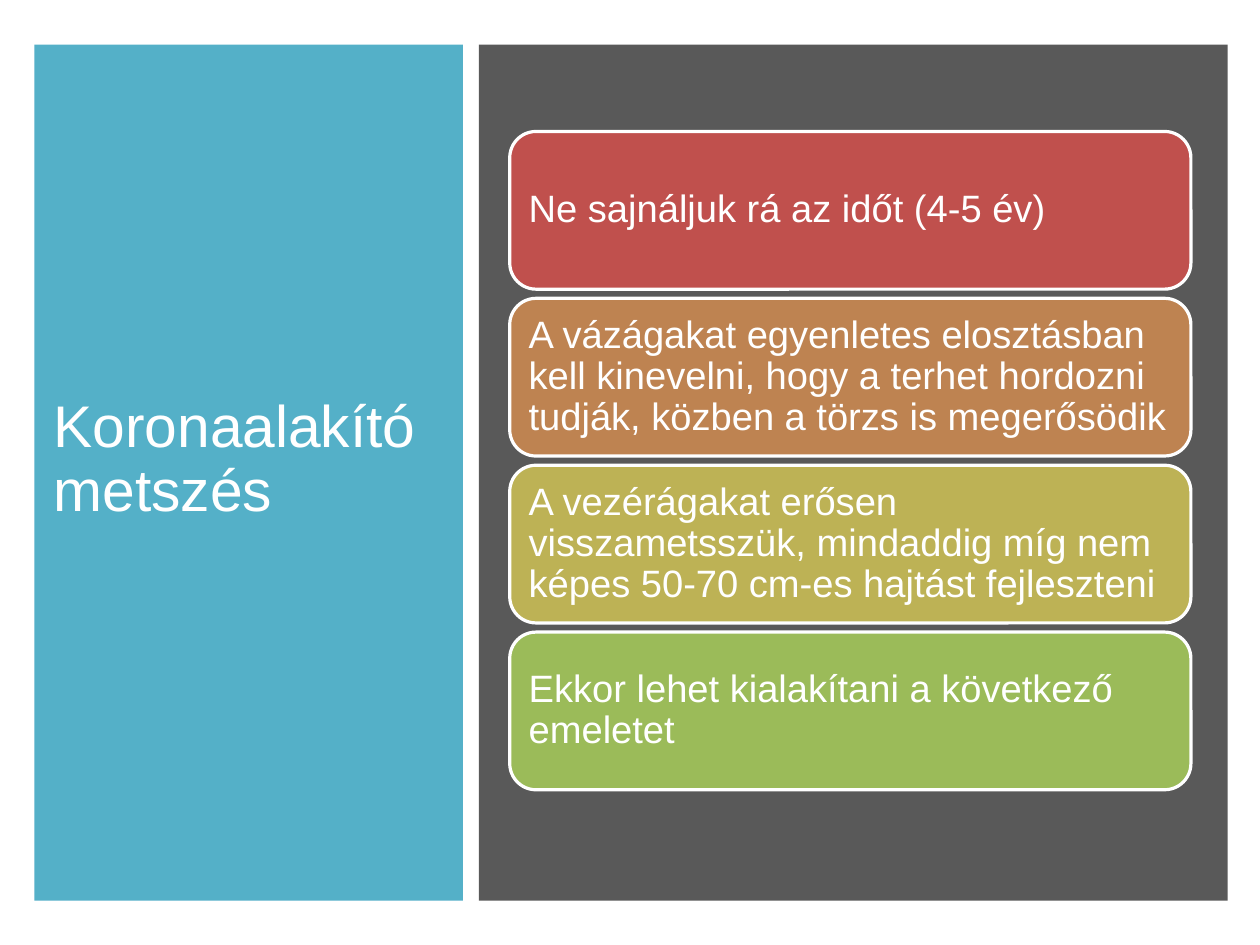
from lxml import etree
from pptx import Presentation
from pptx.dml.color import RGBColor
from pptx.enum import shapes, text
from pptx.oxml import ns
from pptx.util import Inches, Pt

HEADING = "Koronaalakító metszés"
STEPS = [
    ("Ne sajnáljuk rá az időt (4-5 év)", "C0504D"),
    ("A vázágakat egyenletes elosztásban kell kinevelni, hogy a terhet hordozni "
     "tudják, közben a törzs is megerősödik", "BE8351"),
    ("A vezérágakat erősen visszametsszük, mindaddig míg nem képes 50-70 cm-es "
     "hajtást fejleszteni", "BDB255"),
    ("Ekkor lehet kialakítani a következő emeletet", "9BBB59"),
]
THEME = {
    "font": "Arial", "ink": "FFFFFF", "outline": "FFFFFF",
    "heading_panel": "4BACC6", "steps_panel": "595959",
    "heading_size": 37, "step_size": 24, "outline_width": 2,
}
CM_PER_INCH = 2.54
SLIDE_WIDTH, SLIDE_HEIGHT = 28 / CM_PER_INCH, 21 / CM_PER_INCH
PANEL_TOP, PANEL_HEIGHT = 0.39, 7.49
STEP_LEFT, STEP_TOP, STEP_WIDTH, STEP_HEIGHT = 4.46, 1.15, 5.96, 1.38
STEP_PITCH = 1.46


def add_block(slide, preset, box, colour):
    block = slide.shapes.add_shape(preset, *map(Inches, box))
    block.shadow.inherit = False
    block.fill.solid()
    block.fill.fore_color.rgb = RGBColor.from_string(colour)
    block.line.fill.background()
    return block


def write(holder, wording, size, inset):
    frame = holder.text_frame
    frame.text = wording
    frame_format = {
        "word_wrap": True,
        "auto_size": text.MSO_AUTO_SIZE.NONE,
        "vertical_anchor": text.MSO_ANCHOR.MIDDLE,
        **{f"margin_{side}": Inches(inset) for side in ("left", "top", "right", "bottom")},
    }
    for name, value in frame_format.items():
        setattr(frame, name, value)
    paragraph = frame.paragraphs[0]
    paragraph.alignment = text.PP_ALIGN.LEFT
    paragraph.line_spacing = 0.9
    font = paragraph.runs[0].font
    for name, value in {"name": THEME["font"], "size": Pt(size)}.items():
        setattr(font, name, value)
    font.color.rgb = RGBColor.from_string(THEME["ink"])


def main():
    deck = Presentation()
    deck.slide_width, deck.slide_height = Inches(SLIDE_WIDTH), Inches(SLIDE_HEIGHT)
    slide = deck.slides.add_slide(deck.slide_layouts[5])

    heading_panel = add_block(slide, shapes.MSO_SHAPE.RECTANGLE,
                              (0.3, PANEL_TOP, 3.75, PANEL_HEIGHT), THEME["heading_panel"])
    panel_colour = heading_panel._element.spPr.find(".//" + ns.qn("a:srgbClr"))
    etree.SubElement(panel_colour, ns.qn("a:alpha"), val="95000")

    heading = slide.shapes.title
    heading_panel._element.addnext(heading._element)
    for name, value in {"left": 0.47, "top": 0.7, "width": 3.37, "height": 6.66}.items():
        setattr(heading, name, Inches(value))
    write(heading, HEADING, THEME["heading_size"], 0)

    add_block(slide, shapes.MSO_SHAPE.RECTANGLE,
              (4.19, PANEL_TOP, 6.55, PANEL_HEIGHT), THEME["steps_panel"])
    for index, (wording, colour) in enumerate(STEPS):
        box = (STEP_LEFT, STEP_TOP + index * STEP_PITCH, STEP_WIDTH, STEP_HEIGHT)
        step = add_block(slide, shapes.MSO_SHAPE.ROUNDED_RECTANGLE, box, colour)
        step.line.color.rgb = RGBColor.from_string(THEME["outline"])
        step.line.width = Pt(THEME["outline_width"])
        write(step, wording, THEME["step_size"], 0.1)

    deck.save("out.pptx")


if __name__ == "__main__":
    main()
